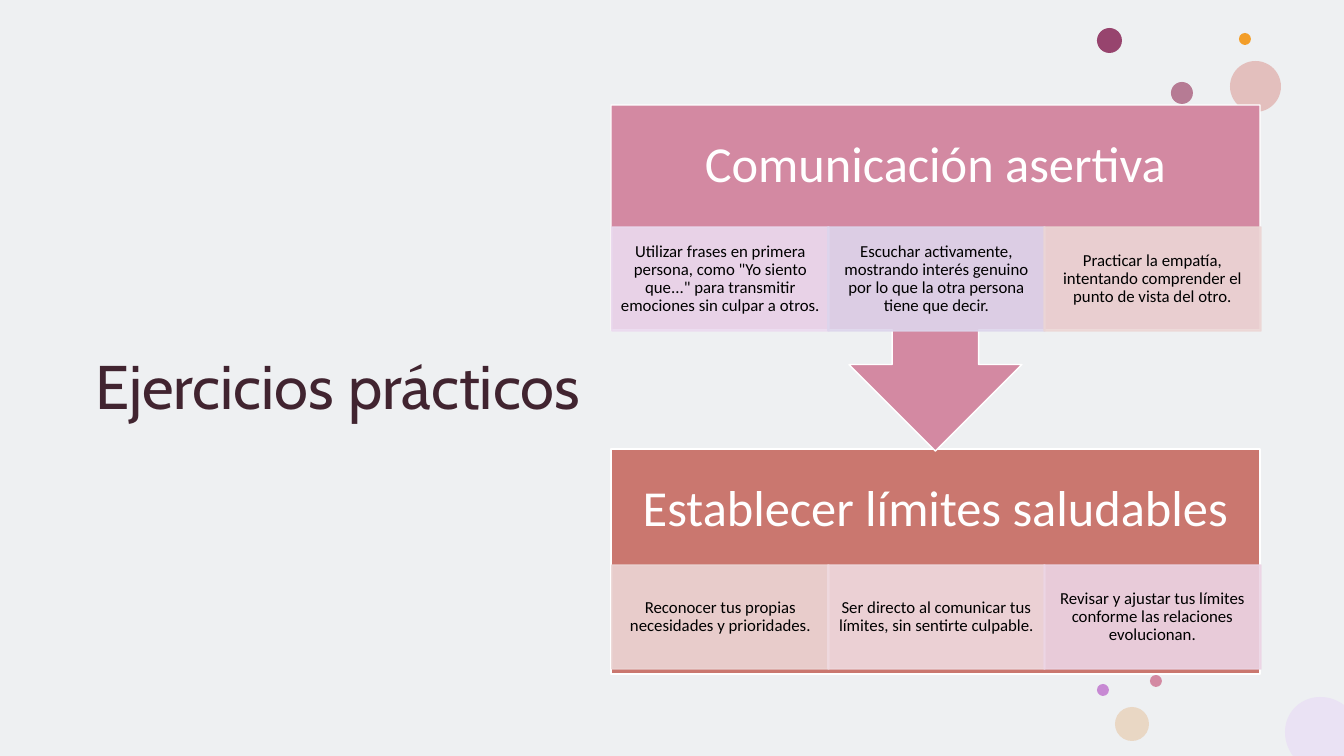
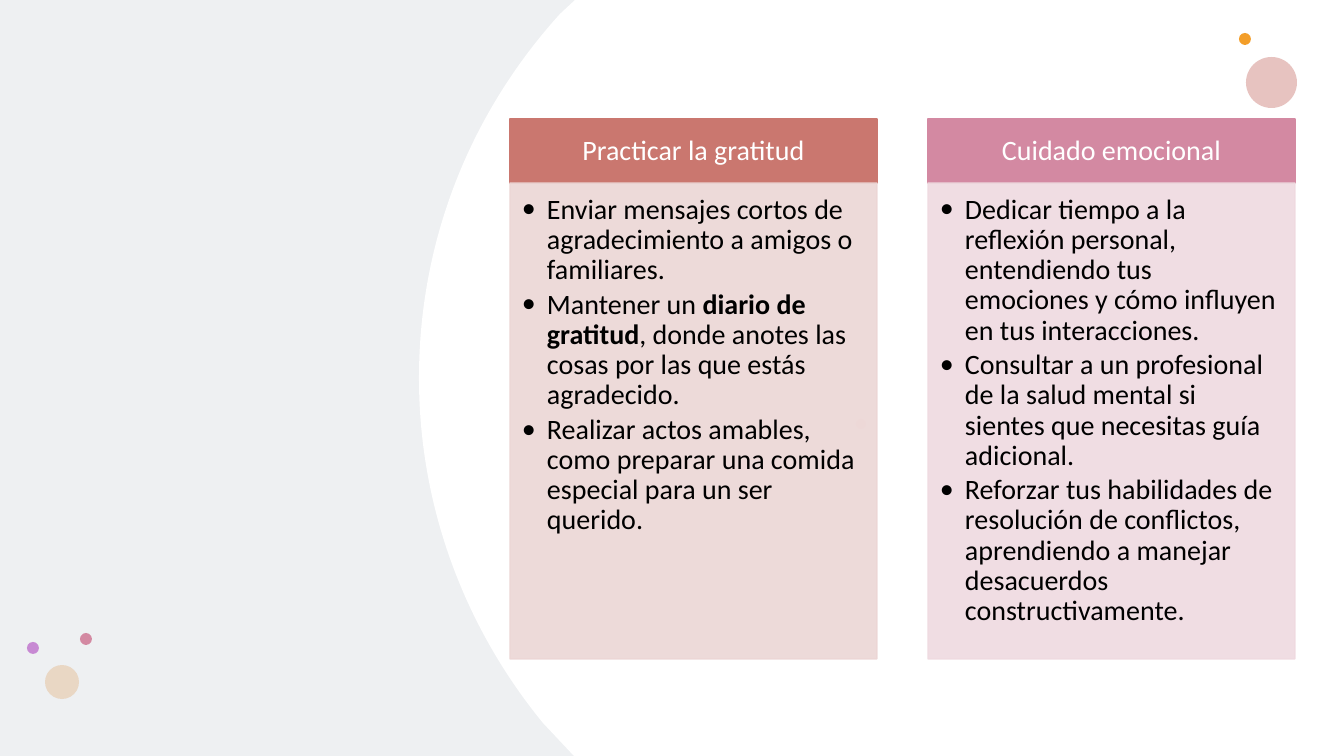
from lxml.etree import SubElement
from pptx import Presentation
from pptx.dml.color import RGBColor
from pptx.enum.shapes import MSO_SHAPE as SHAPE
from pptx.enum.text import MSO_ANCHOR as ANCHOR, PP_ALIGN as ALIGN
from pptx.oxml.ns import qn
from pptx.util import Pt

PX = 914400 / 100.8
WIDTH, HEIGHT = 1344, 756
COLORS = {
    "wash": "C8CED4", "white": "FFFFFF", "black": "000000", "title": "412430",
    "rose": "D389A2", "brick": "CA776F", "wine": "97446E", "mauve": "B67B94",
    "peach": "DFADA9", "orange": "F39E29", "sand": "E9D7C4", "violet": "C789D3",
    "lavender": "EAE2F4", "blush": "E3BEBE",
    "pale orchid": "EBDAEF", "pale violet": "DDD5EC", "pale brick": "ECD6D5",
    "pale rose": "EFDAE0", "pale pink": "ECD5E5",
}
RGB = {name: RGBColor.from_string(value) for name, value in COLORS.items()}


def place(slide, kind, box, fill, line=None, opacity=100):
    shape = slide.shapes.add_shape(kind, *(round(v * PX) for v in box))
    shape.shadow.inherit = False
    shape.fill.solid()
    shape.fill.fore_color.rgb = RGB[fill]
    if line:
        shape.line.color.rgb = RGB[line]
        shape.line.width = Pt(1)
    else:
        shape.line.fill.background()
    if opacity < 100:
        for color in list(shape._element.spPr.iter(qn("a:srgbClr"))):
            SubElement(color, qn("a:alpha"), val=str(opacity * 1000))
    return shape


def write(shape, texts, size, color, insets, anchor=ANCHOR.MIDDLE,
          align=ALIGN.CENTER, font="Calibri", bullets=False):
    frame = shape.text_frame
    frame.word_wrap = True
    frame.vertical_anchor = anchor
    (frame.margin_left, frame.margin_top,
     frame.margin_right, frame.margin_bottom) = (round(v * PX) for v in insets)
    for i, text in enumerate(texts):
        paragraph = frame.paragraphs[0] if i == 0 else frame.add_paragraph()
        if bullets:
            props = paragraph._p.get_or_add_pPr()
            props.set("marL", str(round(25 * PX)))
            props.set("indent", str(round(-25 * PX)))
            SubElement(props, qn("a:buFont"), typeface="Calibri")
            SubElement(props, qn("a:buChar"), char="•")
            paragraph.space_after = Pt(3)
        paragraph.alignment = align
        paragraph.line_spacing = 0.9
        paragraph.font.name = font
        paragraph.font.size = Pt(size)
        paragraph.font.color.rgb = RGB[color]
        for j, part in enumerate(text.split("**")):
            run = paragraph.add_run()
            run.text = part
            if j % 2:
                run.font.bold = True


deck = Presentation()
deck.slide_width, deck.slide_height = round(WIDTH * PX), round(HEIGHT * PX)
exercises, habits = (deck.slides.add_slide(deck.slide_layouts[6]) for _ in range(2))

for slide in (exercises, habits):
    slide.background.fill.solid()
    slide.background.fill.fore_color.rgb = RGB["white"]
    place(slide, SHAPE.RECTANGLE, (0, 0, WIDTH, HEIGHT), "wash", opacity=30)

for slide, fill, start, segments in [
    (exercises, "lavender", (1320, 697), [
        [(1330, 697), (1337, 700), (1344, 705)],
        [(1344, 756)],
        [(1293, 756)],
        [(1288, 749), (1285, 741), (1285, 732)],
        [(1285, 712), (1301, 697), (1320, 697)],
    ]),
    (habits, "white", (575, 0), [
        [(1344, 0)],
        [(1344, 756)],
        [(574, 756)],
        [(543, 723)],
        [(466, 629), (419, 509), (419, 378)],
        [(419, 238), (472, 111), (560, 14)],
    ]),
]:
    builder = slide.shapes.build_freeform(*start, scale=PX)
    builder.add_line_segments([point for segment in segments for point in segment], close=True)
    disc = builder.convert_to_shape()
    disc.shadow.inherit = False
    disc.fill.solid()
    disc.fill.fore_color.rgb = RGB[fill]
    disc.line.fill.background()
    steps = iter(list(disc._element.iter(qn("a:lnTo"))))
    for segment in segments:
        legs = [next(steps) for _ in segment]
        if len(legs) == 3:
            outline = legs[0].getparent()
            curve = SubElement(outline, qn("a:cubicBezTo"))
            legs[0].addprevious(curve)
            for leg in legs:
                curve.append(leg[0])
                outline.remove(leg)

TRIO = [(53, 0, 12, "rose", 100), (18, 32, 34, "sand", 100), (0, 9, 12, "violet", 100)]
ORANGE_DOT = (1239, 33, 12, "orange", 100)
for slide, trio_x, trio_y, dots in [
    (exercises, 1097, 675, [(1097, 28, 25, "wine", 100), (1230, 61, 51, "peach", 72),
                            ORANGE_DOT, (1171, 82, 22, "mauve", 100)]),
    (habits, 27, 633, [(1246, 57, 51, "peach", 72), ORANGE_DOT,
                       (856, 419, 10, "blush", 28)]),
]:
    trio = [(trio_x + x, trio_y + y, *rest) for x, y, *rest in TRIO]
    for x, y, size, fill, opacity in dots + trio:
        place(slide, SHAPE.OVAL, (x, y, size, size), fill, opacity=opacity)

title = exercises.shapes.add_textbox(*(round(v * PX) for v in (85, 105, 508, 569)))
write(title, ["Ejercicios prácticos"], 44, "title", (10, 5, 10, 5),
      align=ALIGN.LEFT, font="Cabin")

PANEL_X, PANEL_W, PANEL_H = 611, 649, 225
CELL_X, CELL_STEP, CELL_W, CELL_H = 612, 216, 217, 104
for heading, kind, y, height, cells_y, fill, cells in [
    ("Establecer límites saludables", SHAPE.RECTANGLE, 449, PANEL_H, 565, "brick", [
        ("pale brick", "Reconocer tus propias necesidades y prioridades."),
        ("pale rose", "Ser directo al comunicar tus límites, sin sentirte culpable."),
        ("pale pink", "Revisar y ajustar tus límites conforme las relaciones evolucionan."),
    ]),
    ("Comunicación asertiva", SHAPE.DOWN_ARROW_CALLOUT, 105, 346, 227, "rose", [
        ("pale orchid", "Utilizar frases en primera persona, como \"Yo siento que...\" "
                        "para transmitir emociones sin culpar a otros."),
        ("pale violet", "Escuchar activamente, mostrando interés genuino "
                        "por lo que la otra persona tiene que decir."),
        ("pale brick", "Practicar la empatía, intentando comprender el punto de vista del otro."),
    ]),
]:
    panel = place(exercises, kind, (PANEL_X, y, PANEL_W, height), fill, "white")
    write(panel, [heading], 36, "white", (28, 28, 28, 27 + CELL_H))
    for i, (tint, text) in enumerate(cells):
        cell = place(exercises, SHAPE.RECTANGLE,
                     (CELL_X + i * CELL_STEP, cells_y, CELL_W, CELL_H), tint, tint, 90)
        write(cell, [text], 12, "black", (9, 2, 9, 2))

COLUMN_X, COLUMN_W, COLUMN_GAP, HEADER_Y, HEADER_H, BODY_H = 510, 367, 51, 119, 64, 476
for i, (heading, fill, tint, points) in enumerate([
    ("Practicar la gratitud", "brick", "pale brick", [
        "Enviar mensajes cortos de agradecimiento a amigos o familiares.",
        "Mantener un **diario de gratitud**, donde anotes las cosas "
        "por las que estás agradecido.",
        "Realizar actos amables, como preparar una comida especial para un ser querido.",
    ]),
    ("Cuidado emocional", "rose", "pale rose", [
        "Dedicar tiempo a la reflexión personal, entendiendo tus emociones "
        "y cómo influyen en tus interacciones.",
        "Consultar a un profesional de la salud mental si sientes que necesitas guía adicional.",
        "Reforzar tus habilidades de resolución de conflictos, "
        "aprendiendo a manejar desacuerdos constructivamente.",
    ]),
]):
    x = COLUMN_X + i * (COLUMN_W + COLUMN_GAP)
    header = place(habits, SHAPE.RECTANGLE, (x, HEADER_Y, COLUMN_W, HEADER_H), fill, fill)
    write(header, [heading], 20, "white", (16, 9, 16, 9))
    body = place(habits, SHAPE.RECTANGLE,
                 (x, HEADER_Y + HEADER_H, COLUMN_W, BODY_H), tint, tint, 90)
    write(body, points, 20, "black", (12, 12, 16, 17), ANCHOR.TOP, ALIGN.LEFT, bullets=True)

deck.save("out.pptx")
